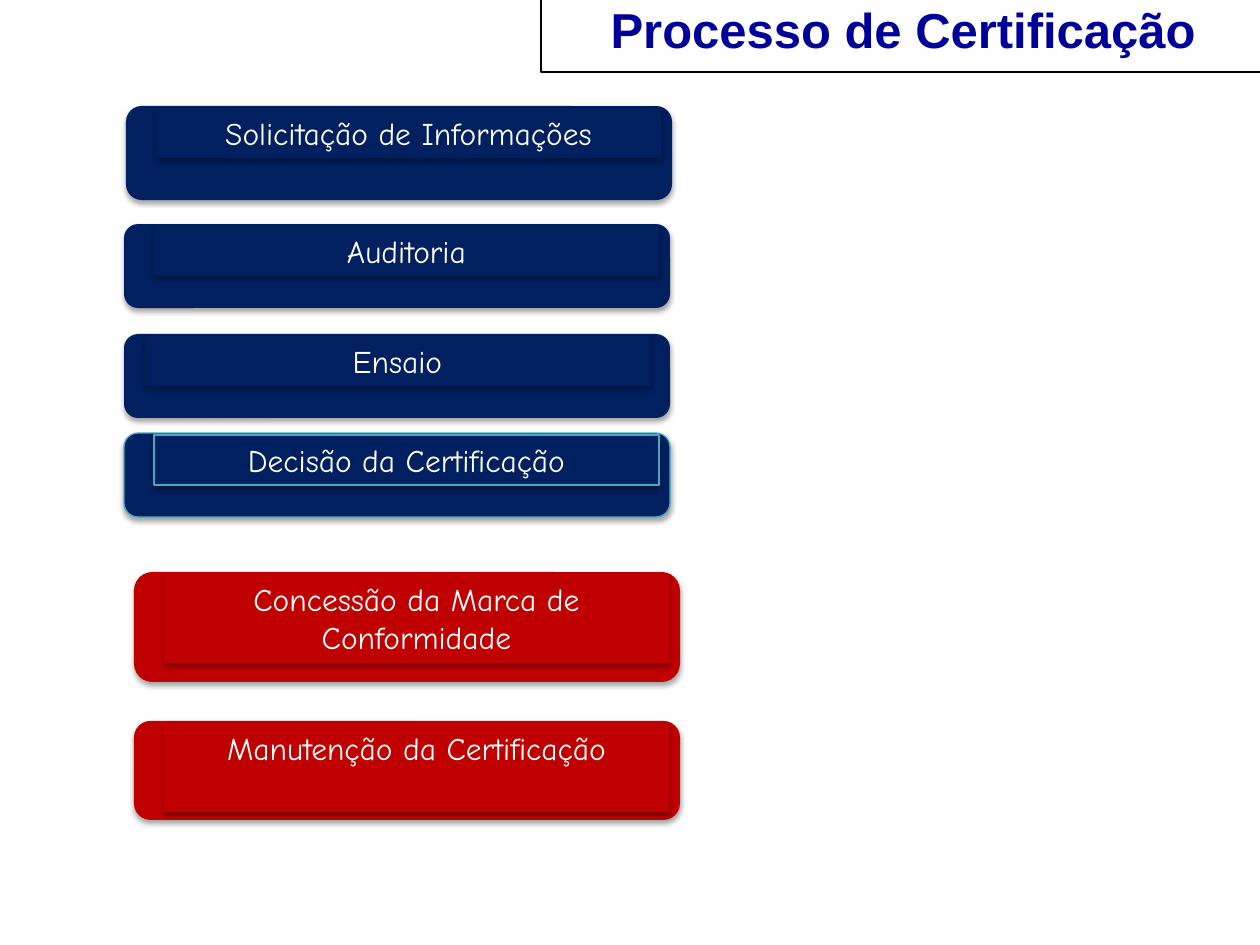
import pptx
import pptx.util
import pptx.dml.color
import pptx.enum.shapes
import pptx.enum.text
import pptx.oxml
import pptx.oxml.ns

COLORS = {
    "navy": "002060",
    "red": "C00000",
    "teal": "46AAC5",
    "white": "FFFFFF",
    "black": "000000",
    "title": "000099",
}
SCALE = 914400 / 126
KIND = pptx.enum.shapes.MSO_SHAPE
ALIGN = pptx.enum.text.PP_ALIGN
ANCHOR = pptx.enum.text.MSO_ANCHOR
SHADOW = (
    f'<a:outerShdw {pptx.oxml.ns.nsdecls("a")} blurRad="39370" dist="22860" '
    'dir="5400000" rotWithShape="0"><a:srgbClr val="000000">'
    '<a:alpha val="35000"/></a:srgbClr></a:outerShdw>'
)


def emu(px):
    return pptx.util.Emu(round(px * SCALE))


def rgb(name):
    return pptx.dml.color.RGBColor.from_string(COLORS[name])


class Deck:
    font = "Comic Neue"
    size = 18
    wide = 546
    inner = 505

    def __init__(self):
        self.file = pptx.Presentation()
        self.file.slide_width = emu(1260)
        self.file.slide_height = emu(945)
        self.slide = self.file.slides.add_slide(self.file.slide_layouts[5])

    def paint(self, shape, fill, line):
        shape.fill.solid()
        shape.fill.fore_color.rgb = rgb(fill)
        if line:
            shape.line.color.rgb = rgb(line)
            shape.line.width = pptx.util.Pt(0.75)
        else:
            shape.line.fill.background()

    def label(self, shape, text, font, size, color, anchor, bold=False):
        frame = shape.text_frame
        frame.word_wrap = True
        frame.auto_size = pptx.enum.text.MSO_AUTO_SIZE.NONE
        frame.vertical_anchor = anchor
        para = frame.paragraphs[0]
        para.alignment = ALIGN.CENTER
        run = para.add_run()
        run.text = text
        run.font.name = font
        run.font.size = pptx.util.Pt(size)
        run.font.bold = bold
        run.font.color.rgb = rgb(color)

    def title(self, text, x, y, w, h):
        shape = self.slide.shapes.title
        shape.left, shape.top, shape.width, shape.height = map(emu, (x, y, w, h))
        self.paint(shape, "white", "black")
        self.label(shape, text, "Arial", 28, "title", ANCHOR.MIDDLE, True)

    def box(self, group, kind, x, y, w, h, fill, line):
        shape = group.shapes.add_shape(kind, *map(emu, (x, y, w, h)))
        self.paint(shape, fill, line)
        shape.shadow.inherit = False
        effect = shape._element.spPr.find(pptx.oxml.ns.qn("a:effectLst"))
        effect.append(pptx.oxml.parse_xml(SHADOW))
        return shape

    def step(self, text, x, y, h, fill, inset=30, deep=50, line=None):
        group = self.slide.shapes.add_group_shape()
        self.box(group, KIND.ROUNDED_RECTANGLE, x, y, self.wide, h, fill, line)
        plate = self.box(group, KIND.RECTANGLE, x + inset, y + 2,
                         self.inner, deep, fill, line)
        self.label(plate, text, self.font, self.size, "white", ANCHOR.TOP)


def main():
    deck = Deck()
    deck.title("Processo de Certificação", 541, -14, 724, 86)
    deck.step("Solicitação de Informações", 126, 106, 94, "navy")
    deck.step("Auditoria", 124, 224, 84, "navy")
    deck.step("Ensaio", 124, 334, 84, "navy", inset=21)
    deck.step("Decisão da Certificação", 124, 433, 84, "navy", line="teal")
    deck.step("Concessão da Marca de Conformidade", 134, 572, 110, "red", deep=89)
    deck.step("Manutenção da Certificação", 134, 721, 99, "red", deep=89)
    deck.file.save("out.pptx")


if __name__ == "__main__":
    main()
